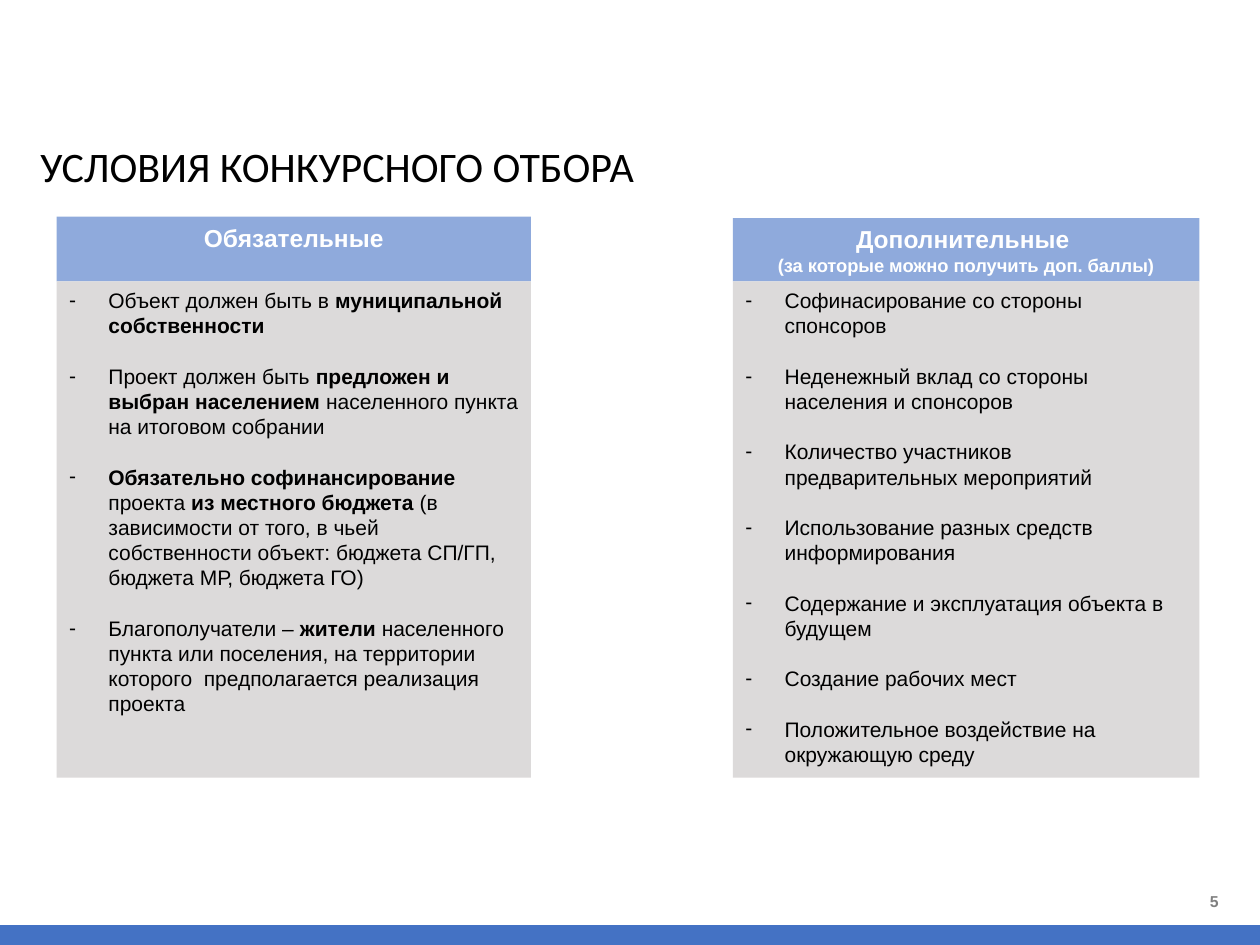
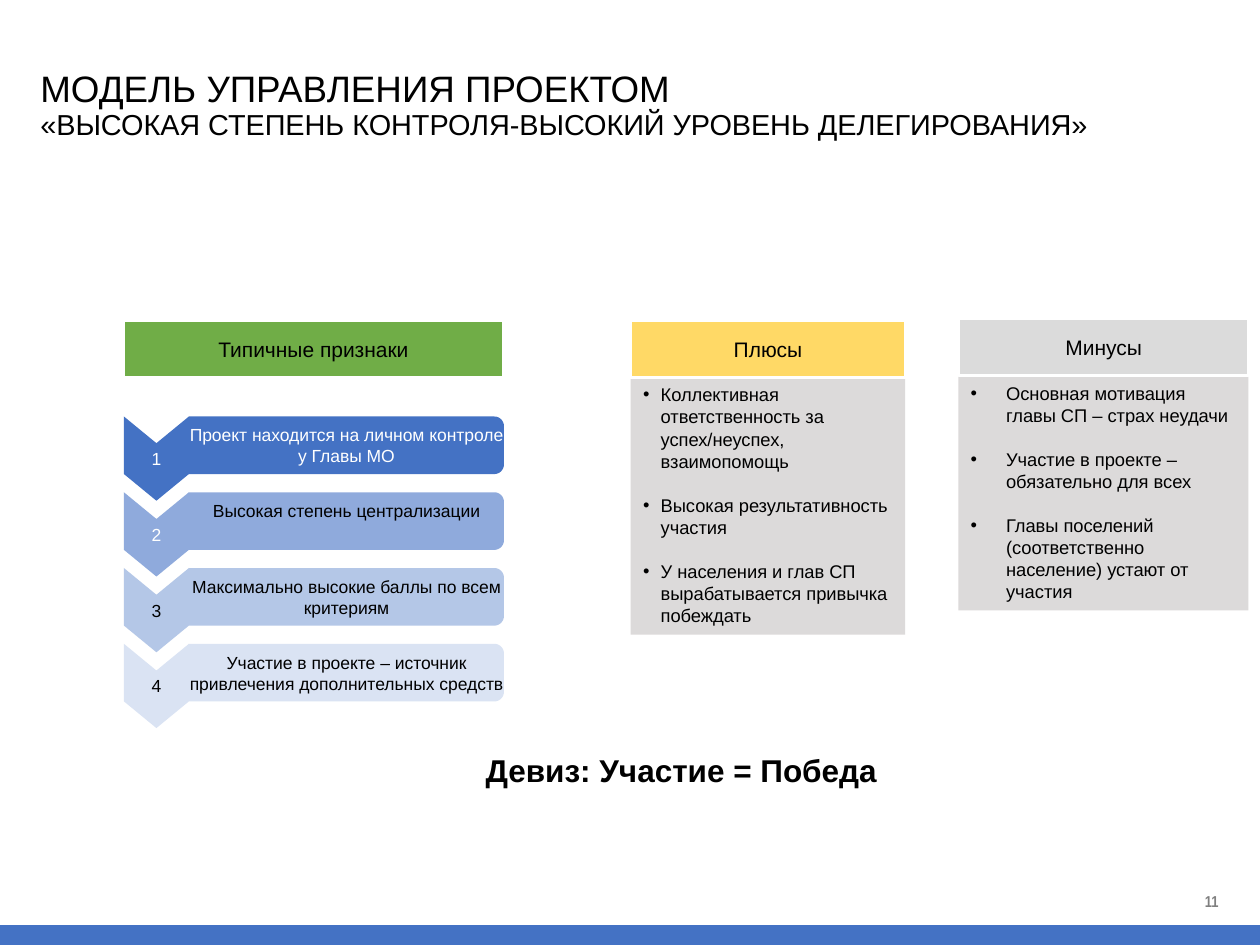
from dataclasses import dataclass
from math import cos, pi, sin

from lxml.etree import SubElement
from pptx import Presentation
from pptx.dml.color import RGBColor as RGB
from pptx.enum.shapes import MSO_SHAPE as SHAPE
from pptx.enum.text import MSO_ANCHOR as ANCHOR, PP_ALIGN as ALIGN
from pptx.oxml.ns import qn
from pptx.util import Pt


@dataclass(frozen=True)
class Theme:
    """Colours, fonts and type sizes of the deck."""
    blue: str = "4472C4"
    mid_blue: str = "8FAADC"
    light_blue: str = "B4C7E7"
    pale_blue: str = "DAE3F3"
    green: str = "70AD47"
    yellow: str = "FFD966"
    silver: str = "DBDBDB"
    card: str = "DCDADA"
    black: str = "000000"
    white: str = "FFFFFF"
    grey: str = "808080"
    font: str = "Arial"
    title: float = 24
    title_wide: float = 21
    subtitle: float = 16.5
    motto: float = 18
    heading: float = 14
    body: float = 12
    small: float = 10.5
    step: float = 10
    number: float = 9


T = Theme()

REQUIRED = [
    "Объект должен быть в **муниципальной собственности**",
    "Проект должен быть **предложен и выбран населением **населенного пункта на итоговом собрании",
    "**Обязательно софинансирование **проекта **из местного бюджета **(в зависимости от того, "
    "в чьей собственности объект: бюджета СП/ГП, бюджета МР, бюджета ГО)",
    "Благополучатели – **жители** населенного пункта или поселения, на территории которого  "
    "предполагается реализация проекта",
]
EXTRA = [
    "Софинасирование со стороны спонсоров",
    "Неденежный вклад со стороны населения и спонсоров",
    "Количество участников предварительных мероприятий",
    "Использование разных средств информирования",
    "Содержание и эксплуатация объекта в будущем",
    "Создание рабочих мест",
    "Положительное воздействие на окружающую среду",
]
PLUSES = [
    "Коллективная ответственность за успех/неуспех, взаимопомощь",
    "Высокая результативность участия",
    "У населения и глав СП вырабатывается привычка побеждать",
]
MINUSES = [
    "Основная мотивация главы СП – страх неудачи",
    "Участие в проекте – обязательно для всех",
    "Главы поселений (соответственно население) устают от участия",
]
STEPS = [
    ("Проект находится на личном контроле у Главы МО", T.blue, T.white, T.white, 0),
    ("Высокая степень централизации", T.mid_blue, T.white, T.black, 12),
    ("Максимально высокие баллы по всем критериям", T.light_blue, T.black, T.black, 0),
    ("Участие в проекте – источник привлечения дополнительных средств",
     T.pale_blue, T.black, T.black, 0),
]


def apply(obj, **fmt):
    """Set each given format value on an object."""
    for name, value in fmt.items():
        setattr(obj, name, value)


def add_run(p, text, size, color=T.black, bold=False, font=T.font):
    """Append a formatted run to a paragraph."""
    r = p.add_run()
    r.text = text
    apply(r.font, size=Pt(size), bold=bold, name=font)
    r.font.color.rgb = RGB.from_string(color)


def paint(sp, fill, line=None):
    """Give a shape its flat fill and optional outline."""
    sp.shadow.inherit = False
    sp.fill.solid()
    sp.fill.fore_color.rgb = RGB.from_string(fill)
    if line:
        sp.line.color.rgb = RGB.from_string(line)
        sp.line.width = Pt(1.5)
    else:
        sp.line.fill.background()
    return sp


def add_rect(s, box, fill, line=None):
    """Draw a rectangle and return its text frame."""
    sp = paint(s.shapes.add_shape(SHAPE.RECTANGLE, *map(Pt, box)), fill, line)
    apply(sp.text_frame, word_wrap=True, vertical_anchor=ANCHOR.TOP)
    return sp.text_frame


def add_text(s, box, text, size, align=ALIGN.LEFT, anchor=ANCHOR.MIDDLE, **style):
    """Add a one-paragraph text box and return the paragraph."""
    tf = s.shapes.add_textbox(*map(Pt, box)).text_frame
    apply(tf, word_wrap=True, vertical_anchor=anchor)
    p = tf.paragraphs[0]
    p.alignment = align
    add_run(p, text, size, **style)
    return p


def add_title(s, box, text, size, subtitle=None, font=T.font):
    """Add the slide title with an optional smaller second line."""
    p = add_text(s, box, text, size, font=font)
    p.line_spacing = 0.9
    if subtitle:
        p.add_line_break()
        add_run(p, subtitle, T.subtitle)


def add_header(s, box, lines, fill, color=T.white, bold=True, line=None, anchor=ANCHOR.TOP):
    """Draw a coloured header with centred lines of (text, size)."""
    tf = add_rect(s, box, fill, line)
    tf.vertical_anchor = anchor
    for i, (text, size) in enumerate(lines):
        p = tf.add_paragraph() if i else tf.paragraphs[0]
        p.alignment = ALIGN.CENTER
        add_run(p, text, size, color, bold)


def add_bullets(s, box, items, size, mark, indent):
    """Draw a grey card with a bulleted list; ** toggles bold."""
    tf = add_rect(s, box, T.card)
    for i, item in enumerate(items):
        p = tf.add_paragraph() if i else tf.paragraphs[0]
        apply(p, alignment=ALIGN.LEFT, space_before=Pt(1.2 * size if i else 0))
        pPr = p._p.get_or_add_pPr()
        pPr.set("marL", str(Pt(indent)))
        pPr.set("indent", str(-Pt(indent)))
        SubElement(pPr, qn("a:buFont")).set("typeface", T.font)
        SubElement(pPr, qn("a:buChar")).set("char", mark)
        for j, part in enumerate(item.split("**")):
            if part:
                add_run(p, part, size, bold=j % 2 == 1)


def add_outline(s, points, fill, text, color, bottom=0):
    """Draw a closed outline with centred step text."""
    start, *rest = [(Pt(x), Pt(y)) for x, y in points]
    fb = s.shapes.build_freeform(*start)
    fb.add_line_segments(rest, close=True)
    tf = paint(fb.convert_to_shape(), fill).text_frame
    apply(tf, word_wrap=True, vertical_anchor=ANCHOR.MIDDLE, margin_left=0,
          margin_right=0, margin_top=0, margin_bottom=Pt(bottom))
    p = tf.paragraphs[0]
    p.alignment = ALIGN.CENTER
    add_run(p, text, T.step, color)


def add_step(s, number, y, text, fill, number_color, text_color, bottom):
    """Draw a numbered chevron and its bar with rounded right corners."""
    left, mid, x, right = 70.8, 89.4, 108, 288
    h, notch, rad = 32.9, 15.3, 5.5
    turns = [i * pi / 16 for i in range(9)]
    top = [(right - rad + rad * sin(a), y + rad - rad * cos(a)) for a in turns]
    low = [(px, 2 * y + h - py) for px, py in reversed(top)]
    add_outline(s, [(x, y), *top, *low, (x, y + h)], fill, text, text_color, bottom)
    chevron = [(left, y), (mid, y + notch), (x, y),
               (x, y + h), (mid, y + h + notch), (left, y + h)]
    add_outline(s, chevron, fill, str(number), number_color)


def add_base(prs, number, font=T.font):
    """Add a blank slide with the footer band and slide number."""
    s = prs.slides.add_slide(prs.slide_layouts[6])
    add_rect(s, (0, 529.2, 720, 10.8), T.blue, T.blue)
    add_text(s, (558, 500.4, 145.4, 28.8), str(number), T.number, ALIGN.RIGHT,
             color=T.grey, bold=True, font=font)
    return s


def build_conditions(prs):
    """Build the slide with the selection conditions."""
    s = add_base(prs, 5)
    add_title(s, (16, 72.7, 680, 48), "УСЛОВИЯ КОНКУРСНОГО ОТБОРА", T.title, font="Calibri")
    extra = [("Дополнительные ", T.heading), ("(за которые можно получить доп. баллы)", T.small)]
    columns = [
        (32.4, 271, 123.8, [("Обязательные", T.heading)], REQUIRED),
        (418.8, 266.6, 124.6, extra, EXTRA),
    ]
    for x, w, top, heading, items in columns:
        add_header(s, (x, top, w, 160.8 - top), heading, T.mid_blue)
        add_bullets(s, (x, 160.8, w, 283.6), items, T.body, "-", 22.5)


def build_model(prs):
    """Build the slide with the project management model."""
    s = add_base(prs, 11, "Arial Narrow")
    add_title(s, (16, 28.8, 680, 64), "МОДЕЛЬ УПРАВЛЕНИЯ ПРОЕКТОМ ", T.title_wide,
              "«ВЫСОКАЯ СТЕПЕНЬ КОНТРОЛЯ-ВЫСОКИЙ УРОВЕНЬ ДЕЛЕГИРОВАНИЯ»")
    add_bullets(s, (547.6, 214.8, 165.8, 134), MINUSES, T.small, "•", 20.25)
    add_bullets(s, (360.4, 215.7, 156.8, 147), PLUSES, T.small, "•", 10.1)
    headers = [
        (70.6, 183.4, 217.2, "Типичные признаки", T.green),
        (360.4, 183.4, 157, "Плюсы", T.yellow),
        (547.8, 182.2, 165.8, "Минусы", T.silver),
    ]
    for x, y, w, text, fill in headers:
        add_header(s, (x, y, w, 32.3), [(text, T.body)], fill, T.black, False,
                   T.white, ANCHOR.MIDDLE)
    for i, step in enumerate(STEPS):
        add_step(s, i + 1, 238 + 43.3 * i, *step)
    add_text(s, (270.4, 425.6, 257, 29), "Девиз: Участие = Победа", T.motto,
             anchor=ANCHOR.TOP, bold=True)


def main():
    """Build and save the deck."""
    prs = Presentation()
    apply(prs, slide_width=Pt(720), slide_height=Pt(540))
    build_conditions(prs)
    build_model(prs)
    prs.save("out.pptx")


if __name__ == "__main__":
    main()
